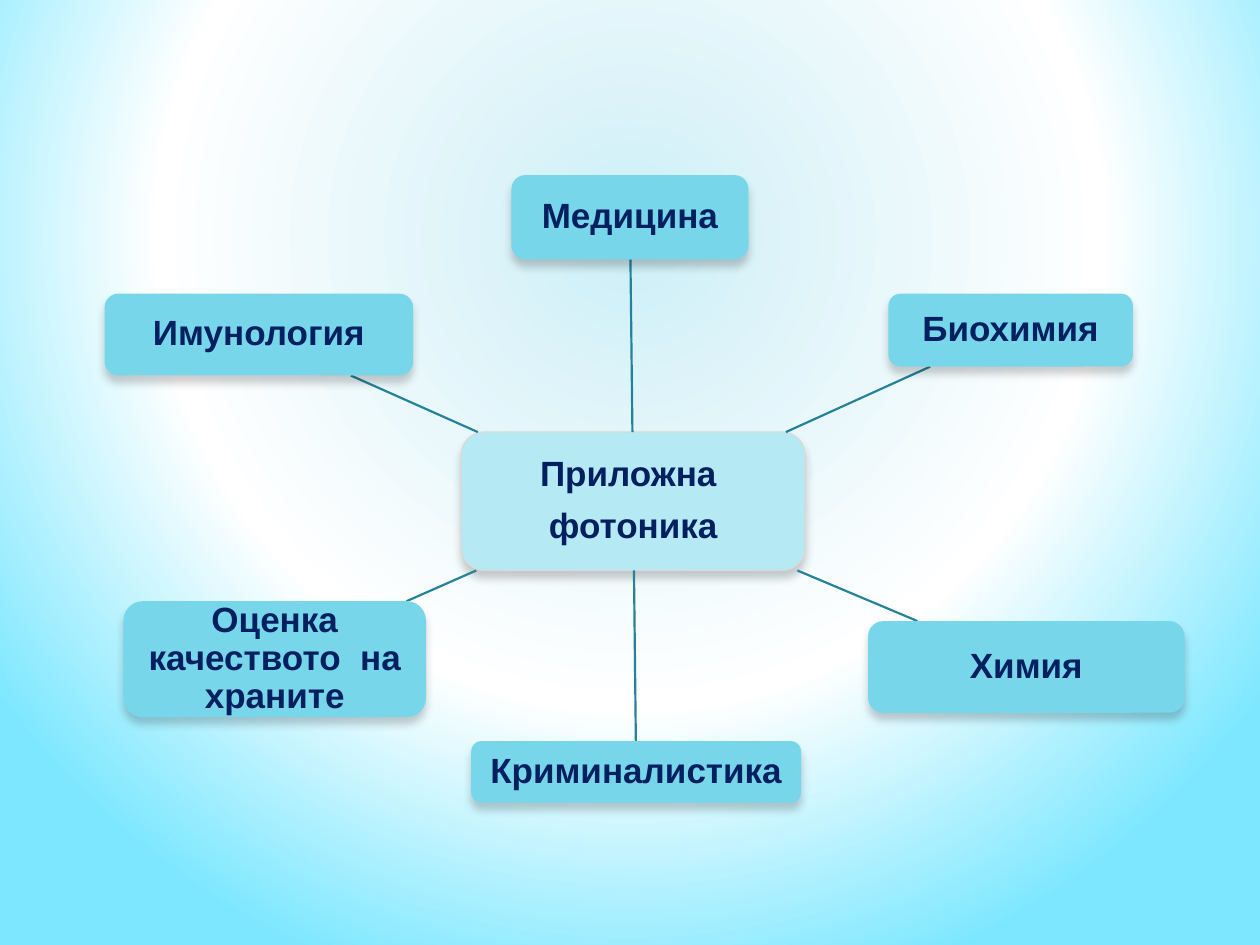
from dataclasses import dataclass

from lxml import etree
from pptx import Presentation
from pptx.dml.color import RGBColor
from pptx.enum.shapes import MSO_CONNECTOR, MSO_SHAPE
from pptx.enum.text import MSO_ANCHOR, PP_ALIGN
from pptx.oxml import parse_xml
from pptx.oxml.ns import qn
from pptx.util import Cm, Pt

ROUNDED = MSO_SHAPE.ROUNDED_RECTANGLE
STRAIGHT = MSO_CONNECTOR.STRAIGHT
MIDDLE = MSO_ANCHOR.MIDDLE
CENTER = PP_ALIGN.CENTER
DRAWING = "http://schemas.openxmlformats.org/drawingml/2006/main"


@dataclass(frozen=True)
class Theme:
    """Colours and type of the slide."""
    font: str = "Arial"
    text_size: float = 20
    text: str = "002060"
    hub: str = "B5E9F4"
    hub_line: str = "D9D9D9"
    topic: str = "78D6EA"
    spoke: str = "248299"
    background: tuple = ((0, "CDEFF7"), (60, "FFFFFF"), (100, "7CE7FF"))


@dataclass(frozen=True)
class Box:
    """A rectangle in centimetres."""
    left: float
    top: float
    width: float
    height: float

    @property
    def center(self):
        """Return the middle point."""
        return self.left + self.width / 2, self.top + self.height / 2

    def edge_toward(self, other):
        """Return the point where the line to another box's centre leaves this box."""
        x, y = self.center
        dx, dy = other.center[0] - x, other.center[1] - y
        reach = min(
            half / abs(delta)
            for half, delta in ((self.width / 2, dx), (self.height / 2, dy))
            if delta
        )
        return x + dx * reach, y + dy * reach


THEME = Theme()
HUB = (("Приложна ", "фотоника"), Box(9.3, 8.71, 6.93, 2.79))
TOPICS = (
    ("Медицина", Box(10.31, 3.53, 4.78, 1.7)),
    ("Биохимия", Box(17.91, 5.92, 4.93, 1.47)),
    ("Оценка качеството  на храните", Box(2.49, 12.12, 6.1, 2.34)),
    ("Химия", Box(17.5, 12.52, 6.38, 1.85)),
    ("Имунология", Box(2.11, 5.92, 6.22, 1.65)),
    ("Криминалистика", Box(9.5, 14.94, 6.65, 1.24)),
)


def paint_background(slide):
    """Fill the slide with a circular gradient."""
    slide.background.fill.solid()
    solid = next(slide.element.iter(qn("a:solidFill")))
    stops = "".join(
        f'<a:gs pos="{position * 1000}"><a:srgbClr val="{color}"/></a:gs>'
        for position, color in THEME.background
    )
    gradient = parse_xml(
        f'<a:gradFill xmlns:a="{DRAWING}" rotWithShape="1"><a:gsLst>{stops}</a:gsLst>'
        '<a:path path="circle"><a:fillToRect l="20000" t="10000" r="20000" b="60000"/>'
        "</a:path></a:gradFill>"
    )
    solid.getparent().replace(solid, gradient)


def add_soft_shadow(shape):
    """Give a shape a faint shadow straight below it."""
    shape.shadow.inherit = False
    effects = shape.element.spPr.find(qn("a:effectLst"))
    effects.append(parse_xml(
        f'<a:outerShdw xmlns:a="{DRAWING}" blurRad="{Pt(5)}" dist="{Pt(4)}" '
        'dir="5400000" rotWithShape="0"><a:srgbClr val="000000">'
        '<a:alpha val="20000"/></a:srgbClr></a:outerShdw>'
    ))


def add_label(slide, box, lines, fill, outline=None):
    """Place a rounded box with centred bold lines."""
    shape = slide.shapes.add_shape(
        ROUNDED, Cm(box.left), Cm(box.top), Cm(box.width), Cm(box.height)
    )
    shape.fill.solid()
    shape.fill.fore_color.rgb = RGBColor.from_string(fill)
    if outline:
        shape.line.color.rgb = RGBColor.from_string(outline)
        shape.line.width = Pt(0.75)
    else:
        shape.line.fill.background()
    add_soft_shadow(shape)
    frame = shape.text_frame
    frame.word_wrap = True
    frame.vertical_anchor = MIDDLE
    frame.margin_left = frame.margin_right = Cm(0.15)
    frame.margin_top = frame.margin_bottom = Cm(0.15)
    frame.text = "\n".join(lines)
    for paragraph in frame.paragraphs:
        paragraph.alignment = CENTER
        paragraph.line_spacing = 0.9
        paragraph.space_after = Pt(8)
        paragraph.font.name = THEME.font
        paragraph.font.size = Pt(THEME.text_size)
        paragraph.font.bold = True
        paragraph.font.color.rgb = RGBColor.from_string(THEME.text)


def add_spoke(slide, hub, topic):
    """Join the edges of two boxes along the line between their centres."""
    points = (*hub.edge_toward(topic), *topic.edge_toward(hub))
    spoke = slide.shapes.add_connector(STRAIGHT, *map(Cm, points))
    spoke.line.color.rgb = RGBColor.from_string(THEME.spoke)
    spoke.line.width = Pt(1.25)
    etree.SubElement(spoke.element.spPr, qn("a:effectLst"))


def add_radial_diagram(slide, hub, topics):
    """Draw the hub with a spoke to each topic around it."""
    hub_lines, hub_box = hub
    add_label(slide, hub_box, hub_lines, THEME.hub, THEME.hub_line)
    for name, box in topics:
        add_spoke(slide, hub_box, box)
        add_label(slide, box, (name,), THEME.topic)


def main():
    """Build and save the presentation."""
    presentation = Presentation()
    presentation.slide_width, presentation.slide_height = Cm(25.4), Cm(19.05)
    slide = presentation.slides.add_slide(presentation.slide_layouts[6])
    paint_background(slide)
    add_radial_diagram(slide, HUB, TOPICS)
    presentation.save("out.pptx")


if __name__ == "__main__":
    main()
